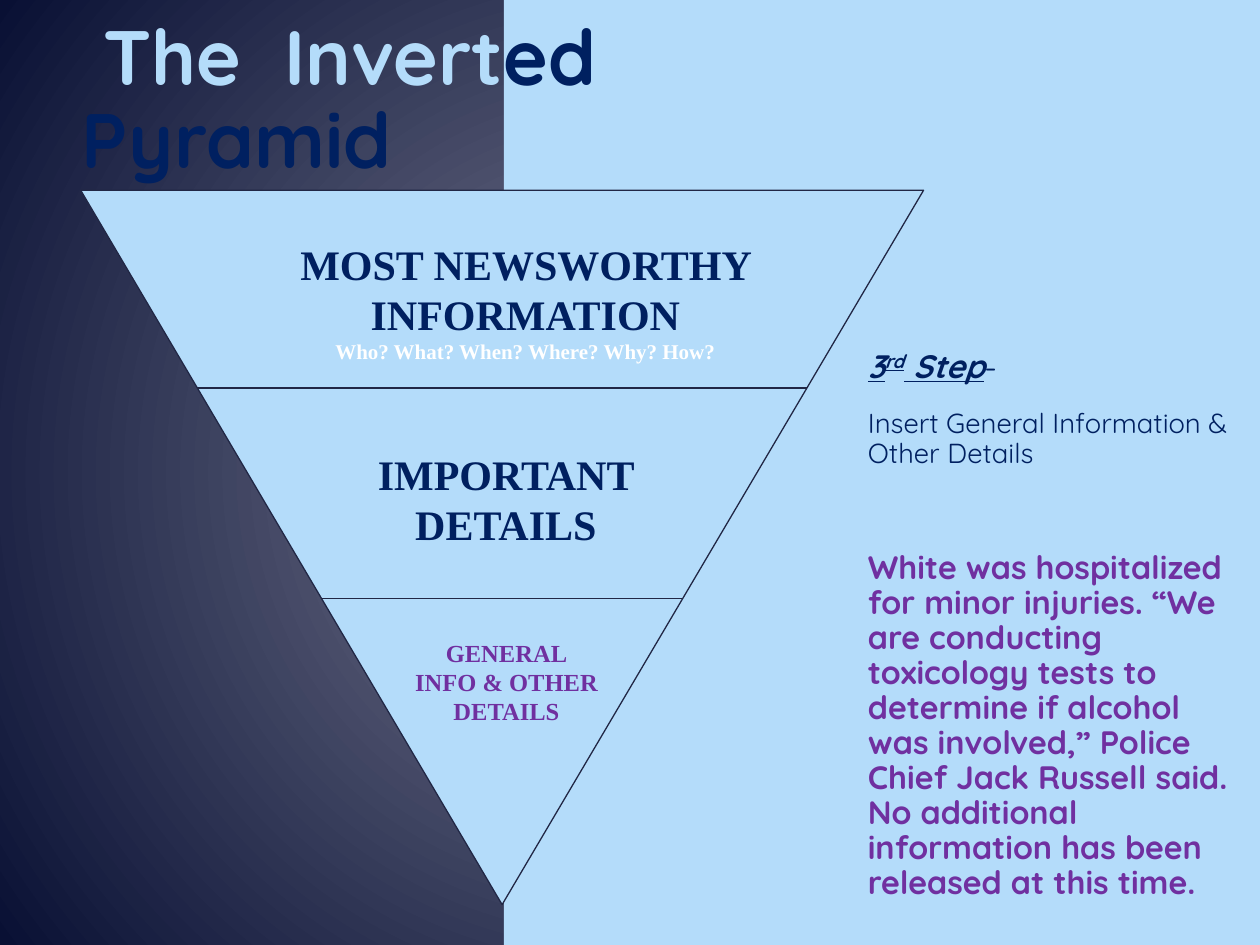
import pptx
import pptx.dml.color
import pptx.enum.shapes
import pptx.enum.text
import pptx.oxml.ns
import pptx.util
from dataclasses import dataclass
from lxml import etree

Inches = pptx.util.Inches
Pt = pptx.util.Pt
Align = pptx.enum.text.PP_ALIGN
Anchor = pptx.enum.text.MSO_ANCHOR
Shapes = pptx.enum.shapes.MSO_SHAPE
qn = pptx.oxml.ns.qn


@dataclass(frozen=True)
class Theme:
    glow: str = "787B91"
    night: str = "091034"
    sky: str = "B4DCFA"
    outline: str = "212745"
    navy: str = "002060"
    purple: str = "7030A0"
    white: str = "FFFFFF"
    heading_font: str = "Quicksand"
    pyramid_font: str = "Times New Roman"
    title_size: float = 44
    level_size: float = 24
    tip_size: float = 14
    question_size: float = 12
    body_size: float = 18.5
    instruction_size: float = 15.7
    line_width: float = 0.75


def rgb(value):
    return pptx.dml.color.RGBColor.from_string(value)


class SlideBuilder:
    def __init__(self, slide, theme):
        self.slide = slide
        self.theme = theme

    def background(self):
        fill = self.slide.background.fill
        fill.gradient()
        for stop, color in zip(fill.gradient_stops, (self.theme.glow, self.theme.night)):
            stop.color.rgb = rgb(color)
        gradient = self.slide.background._cSld.find(".//" + qn("a:gradFill"))
        gradient.remove(gradient.find(qn("a:lin")))
        circle = etree.SubElement(gradient, qn("a:path"), {"path": "circle"})
        center = dict.fromkeys("ltrb", "50000")
        etree.SubElement(circle, qn("a:fillToRect"), center)

    def shape(self, container, kind, box, outline=None):
        shape = container.add_shape(kind, *map(Inches, box))
        shape.shadow.inherit = False
        shape.fill.solid()
        shape.fill.fore_color.rgb = rgb(self.theme.sky)
        if outline:
            shape.line.color.rgb = rgb(outline)
            shape.line.width = Pt(self.theme.line_width)
        else:
            shape.line.fill.background()

    def horizontal_line(self, container, left, right, y):
        line = container.add_connector(
            pptx.enum.shapes.MSO_CONNECTOR.STRAIGHT,
            Inches(left), Inches(y), Inches(right), Inches(y))
        line.line.color.rgb = rgb(self.theme.outline)
        line.line.width = Pt(self.theme.line_width)
        etree.SubElement(line._element.spPr, qn("a:effectLst"))

    def text(self, container, box, paragraphs, font, align=Align.LEFT,
             anchor=Anchor.TOP, vertical_inset=0.05, line_spacing=None, gaps=()):
        text_frame = container.add_textbox(*map(Inches, box)).text_frame
        text_frame.word_wrap = True
        text_frame.vertical_anchor = anchor
        text_frame.margin_left = text_frame.margin_right = Inches(0.1)
        text_frame.margin_top = text_frame.margin_bottom = Inches(vertical_inset)
        text_frame.text = "\n".join("" for _ in paragraphs)
        for paragraph, runs in zip(text_frame.paragraphs, paragraphs):
            paragraph.alignment = align
            paragraph.line_spacing = line_spacing
            for words, size, color, style in runs:
                run = paragraph.add_run()
                run.text = words
                run.font.name = font
                run.font.size = Pt(size)
                run.font.color.rgb = rgb(color)
                run.font.bold = "b" in style
                run.font.italic = "i" in style
                run.font.underline = "u" in style
                if "^" in style:
                    run._r.get_or_add_rPr().set("baseline", "30000")
        for paragraph, gap in zip(text_frame.paragraphs, gaps):
            paragraph.space_before = Pt(gap)


def add_pyramid(builder):
    theme = builder.theme
    group = builder.slide.shapes.add_group_shape().shapes
    left, top, width, height = triangle = (0.64, 1.51, 6.69, 5.67)
    builder.shape(group, Shapes.FLOWCHART_MERGE, triangle, theme.outline)
    for y in (3.08, 4.75):
        inset = width / 2 * (y - top) / height
        builder.horizontal_line(group, left + inset, left + width - inset, y)

    levels = (
        ((1.55, 1.79, 5.24, 0.64), (
            ("MOST NEWSWORTHY INFORMATION", theme.level_size, theme.navy),
            ("Who? What? When? Where? Why? How?", theme.question_size, theme.white))),
        ((2.46, 3.46, 3.11, 0.64), (
            ("IMPORTANT DETAILS", theme.level_size, theme.navy),)),
        ((3.14, 4.96, 1.76, 1.11), (
            ("GENERAL", theme.tip_size, theme.purple),
            ("INFO & OTHER DETAILS", theme.tip_size, theme.purple))),
    )
    for box, lines in levels:
        builder.text(group, box, [[(*line, "b")] for line in lines],
                     theme.pyramid_font, Align.CENTER, vertical_inset=0.1)


def add_title(builder):
    theme = builder.theme
    title = [[(" The  Invert", theme.title_size, theme.sky, "b"),
              ("ed Pyramid", theme.title_size, theme.navy, "b")]]
    builder.text(builder.slide.shapes, (0.55, 0.02, 6.78, 1.5), title,
                 theme.heading_font, anchor=Anchor.BOTTOM, line_spacing=0.9)


def add_step(builder):
    theme = builder.theme
    size = theme.body_size
    paragraphs = [
        [("3", size, theme.navy, "biu"), ("rd", size, theme.navy, "biu^"),
         (" Step", size, theme.navy, "biu"), ("-", size, theme.navy, "")],
        [("Insert General Information & Other Details",
          theme.instruction_size, theme.navy, "")],
        [("White was hospitalized for minor injuries. “We are conducting "
          "toxicology tests to determine if alcohol was involved,” Police "
          "Chief Jack Russell said. No additional information has been "
          "released at this time.", size, theme.purple, "b")],
    ]
    builder.text(builder.slide.shapes, (6.79, 2.73, 3.14, 4.75), paragraphs,
                 theme.heading_font, line_spacing=0.9, gaps=(0, 14, 47))


def main():
    presentation = pptx.Presentation()
    presentation.slide_width = Inches(10)
    presentation.slide_height = Inches(7.5)
    slide = presentation.slides.add_slide(presentation.slide_layouts[6])
    builder = SlideBuilder(slide, Theme())
    builder.background()
    builder.shape(slide.shapes, Shapes.RECTANGLE, (4, 0, 6, 7.5))
    add_pyramid(builder)
    add_title(builder)
    add_step(builder)
    presentation.save("out.pptx")


if __name__ == "__main__":
    main()
